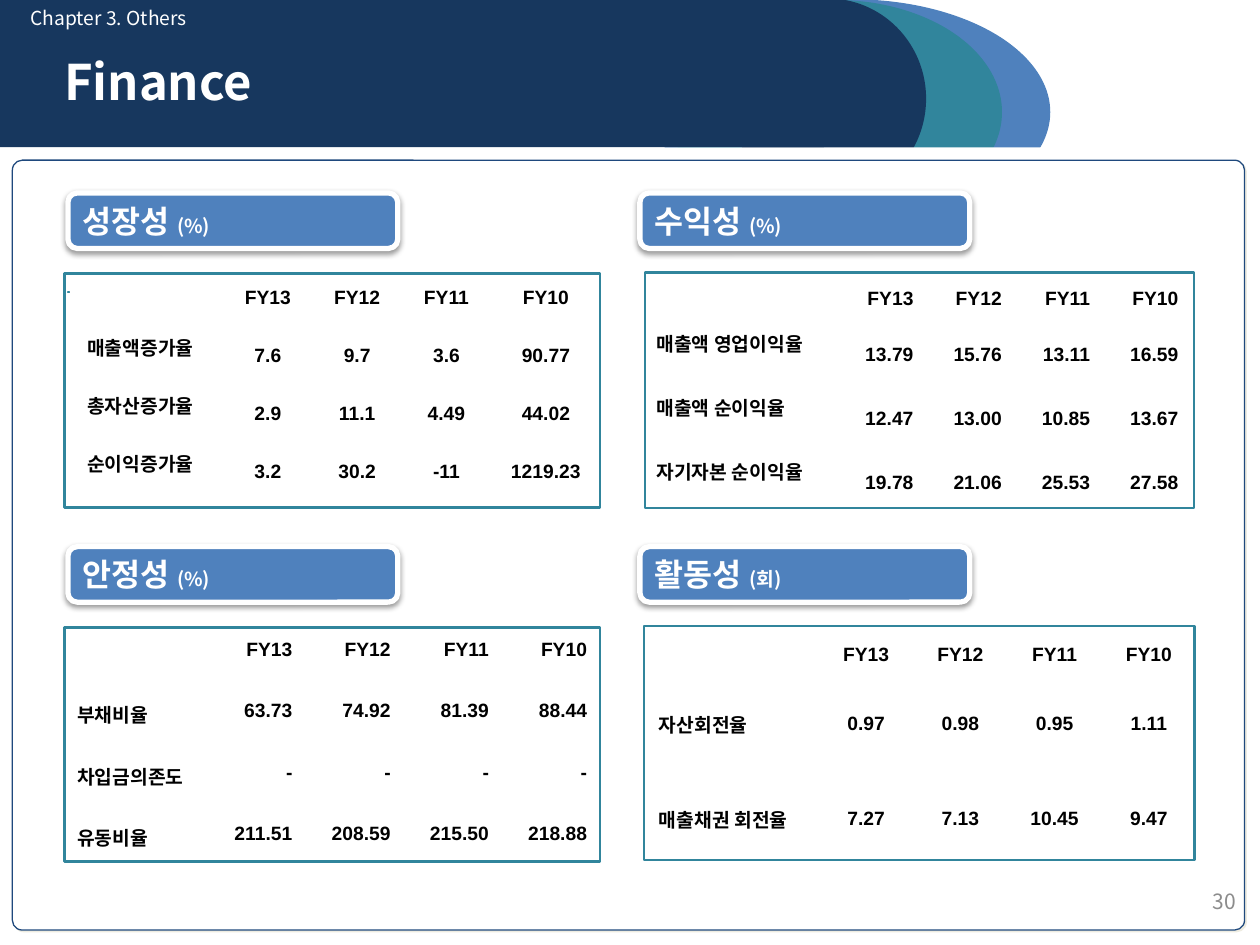
import pptx
import pptx.util
import pptx.dml.color
import pptx.enum.shapes
import pptx.enum.text
import pptx.oxml
import pptx.oxml.ns
import lxml.etree

Cm, Pt = pptx.util.Cm, pptx.util.Pt
KIND = pptx.enum.shapes.MSO_SHAPE
ALIGN = pptx.enum.text.PP_ALIGN
ANCHOR = pptx.enum.text.MSO_ANCHOR
QN = pptx.oxml.ns.qn
SANS, ARIAL = "Noto Sans CJK KR", "Arial"
PLAIN = "{2D5ABB26-0587-4C30-8999-92F81FD0307C}"
HUES = {"navy": "17375E", "teal": "31859C", "blue": "4F81BD", "edge": "1F497D",
        "white": "FFFFFF", "black": "000000", "gray": "8C8C8C", "dot": "C0C0C0",
        "sand": "EEECE1"}
YEARS = ["", "FY13", "FY12", "FY11", "FY10"]

PARTS = [
    {"name": "성장성", "unit": "(%)", "chip": (1.37, 3.89),
     "frame": (1.3, 5.51, 10.8, 4.72), "spot": (1.5, 5.41),
     "cols": [3, 1.8, 1.8, 1.8, 2.21], "rows": [1.17] * 4,
     "align": ALIGN.CENTER, "label": ANCHOR.TOP, "value": ANCHOR.MIDDLE, "face": ARIAL,
     "data": [["매출액증가율", "7.6", "9.7", "3.6", "90.77"],
              ["총자산증가율", "2.9", "11.1", "4.49", "44.02"],
              ["순이익증가율", "3.2", "30.2", "-11", "1219.23"]]},
    {"name": "수익성", "unit": "(%)", "chip": (12.9, 3.89),
     "frame": (13, 5.49, 11.07, 4.75), "spot": (12.98, 5.54),
     "cols": [3.91] + [1.78] * 4, "rows": [0.97] + [1.29] * 3,
     "align": ALIGN.RIGHT, "label": ANCHOR.TOP, "value": ANCHOR.MIDDLE, "face": ARIAL,
     "data": [["매출액 영업이익율", "13.79", "15.76", "13.11", "16.59"],
              ["매출액 순이익율", "12.47", "13.00", "10.85", "13.67"],
              ["자기자본 순이익율", "19.78", "21.06", "25.53", "27.58"]]},
    {"name": "안정성", "unit": "(%)", "chip": (1.37, 11.02),
     "frame": (1.3, 12.65, 10.8, 4.72), "spot": (1.3, 12.75),
     "cols": [2.97, 1.88] + [1.98] * 3, "rows": [1.24] * 4,
     "align": ALIGN.RIGHT, "label": ANCHOR.TOP, "value": ANCHOR.TOP, "face": SANS,
     "data": [["부채비율", "63.73", "74.92", "81.39", "88.44"],
              ["차입금의존도", "-", "-", "-", "-"],
              ["유동비율", "211.51", "208.59", "215.50", "218.88"]]},
    {"name": "활동성", "unit": "(회)", "chip": (12.9, 11.02),
     "frame": (12.98, 12.62, 11.1, 4.72), "spot": (13.03, 12.67),
     "cols": [3.48] + [1.9] * 4, "rows": [1.04, 1.75, 2.08],
     "align": ALIGN.CENTER, "label": ANCHOR.MIDDLE, "value": ANCHOR.MIDDLE, "face": ARIAL,
     "data": [["자산회전율", "0.97", "0.98", "0.95", "1.11"],
              ["매출채권 회전율", "7.27", "7.13", "10.45", "9.47"]]},
]


def color(hue):
    return pptx.dml.color.RGBColor.from_string(HUES[hue])


def apply(item, **form):
    for key, value in form.items():
        setattr(item, key, value)


def place(box):
    return [Cm(n) for n in box]


def write(para, text, size, hue, face=SANS, bold=False):
    run = para.add_run()
    run.text = text
    apply(run.font, size=Pt(size), name=face, bold=bold)
    run.font.color.rgb = color(hue)
    east = lxml.etree.SubElement(run.font._element, QN("a:ea"))
    east.set("typeface", SANS)


def shape(slide, kind, box, fill=None, line=None, width=0.75, curve=None):
    item = slide.shapes.add_shape(kind, *place(box))
    item.shadow.inherit = False
    if fill:
        item.fill.solid()
        item.fill.fore_color.rgb = color(fill)
    else:
        item.fill.background()
    if line:
        item.line.color.rgb = color(line)
        item.line.width = Pt(width)
    else:
        item.line.fill.background()
    if curve is not None:
        item.adjustments[0] = curve
    return item


def shade(item, hue, alpha, blur, dist, angle):
    root = item._element.spPr.find(QN("a:effectLst"))
    root.append(pptx.oxml.parse_xml(
        f'<a:outerShdw {pptx.oxml.ns.nsdecls("a")} blurRad="{Pt(blur)}" '
        f'dist="{Pt(dist)}" dir="{angle * 60000}" rotWithShape="0">'
        f'<a:srgbClr val="{HUES[hue]}"><a:alpha val="{alpha * 1000}"/>'
        '</a:srgbClr></a:outerShdw>'))


def label(slide, box, text, size, hue, align=ALIGN.LEFT, anchor=ANCHOR.TOP):
    frame = slide.shapes.add_textbox(*place(box)).text_frame
    apply(frame, word_wrap=True, vertical_anchor=anchor)
    frame.paragraphs[0].alignment = align
    write(frame.paragraphs[0], text, size, hue)


def chip(slide, part):
    item = shape(slide, KIND.ROUNDED_RECTANGLE, (*part["chip"], 6.65, 1.12),
                 "blue", "white", 3, 0.167)
    shade(item, "black", 38, 3.1, 1.6, 90)
    apply(item.text_frame, word_wrap=True, vertical_anchor=ANCHOR.MIDDLE)
    para = item.text_frame.paragraphs[0]
    para.alignment = ALIGN.LEFT
    write(para, part["name"] + " ", 18, "white", bold=True)
    write(para, part["unit"], 11, "white", bold=True)


def grid(slide, part):
    cols, rows = part["cols"], part["rows"]
    box = place((*part["spot"], sum(cols), sum(rows)))
    table = slide.shapes.add_table(len(rows), len(cols), *box).table
    apply(table, first_row=False, horz_banding=False)
    table._tbl.tblPr.find(QN("a:tableStyleId")).text = PLAIN
    for col, width in zip(table.columns, cols):
        col.width = Cm(width)
    for row, height in zip(table.rows, rows):
        row.height = Cm(height)
    for r, line in enumerate([YEARS] + part["data"]):
        for c, text in enumerate(line):
            cell = table.cell(r, c)
            cell.fill.background()
            if not text:
                apply(cell, margin_top=0, margin_bottom=0)
                continue
            cell.vertical_anchor = part["value" if c else "label"]
            para = cell.text_frame.paragraphs[0]
            para.alignment = part["align"] if c else ALIGN.LEFT
            write(para, text, 11, "black", ARIAL if c else part["face"], True)


def banner(slide):
    shape(slide, KIND.OVAL, (13.21, 0, 7.95, 4.52), "blue", "blue")
    shape(slide, KIND.OVAL, (13.49, 0, 6.71, 4.52), "teal")
    shape(slide, KIND.OVAL, (14.71, -0.03, 3.96, 4.04), "navy")
    shape(slide, KIND.RECTANGLE, (0, 2.97, 25.4, 2.36), "white")
    shape(slide, KIND.RECTANGLE, (0, 0, 16.61, 2.97), "navy")
    panel = shape(slide, KIND.ROUNDED_RECTANGLE, (0.25, 3.23, 24.84, 15.52),
                  "white", "edge", curve=0.013)
    shade(panel, "sand", 100, 0, 1.4, 45)


def head(slide, text):
    title = slide.shapes.title
    left, top, width, height = place((1.04, 0.91, 17.07, 1.45))
    apply(title, left=left, top=top, width=width, height=height)
    apply(title.text_frame, word_wrap=True, vertical_anchor=ANCHOR.TOP,
          auto_size=pptx.enum.text.MSO_AUTO_SIZE.NONE)
    para = title.text_frame.paragraphs[0]
    para.alignment = ALIGN.LEFT
    write(para, text, 28, "white", bold=True)
    slide.shapes._spTree.append(title._element)


def main():
    deck = pptx.Presentation()
    apply(deck, slide_width=Cm(25.4), slide_height=Cm(19.05))
    slide = deck.slides.add_slide(deck.slide_layouts[5])
    banner(slide)
    shape(slide, KIND.RECTANGLE, (1.37, 5.89, 0.03, 0), "dot", "teal")
    for part in PARTS:
        shape(slide, KIND.RECTANGLE, part["frame"], line="teal", width=1.5)
        grid(slide, part)
    for part in PARTS:
        chip(slide, part)
    label(slide, (19.25, 17.65, 5.92, 1.02), "30", 12, "gray", ALIGN.RIGHT, ANCHOR.MIDDLE)
    head(slide, "Finance")
    label(slide, (0.36, 0, 9.14, 0.74), "Chapter 3. Others", 11, "white")
    deck.save("out.pptx")


if __name__ == "__main__":
    main()
